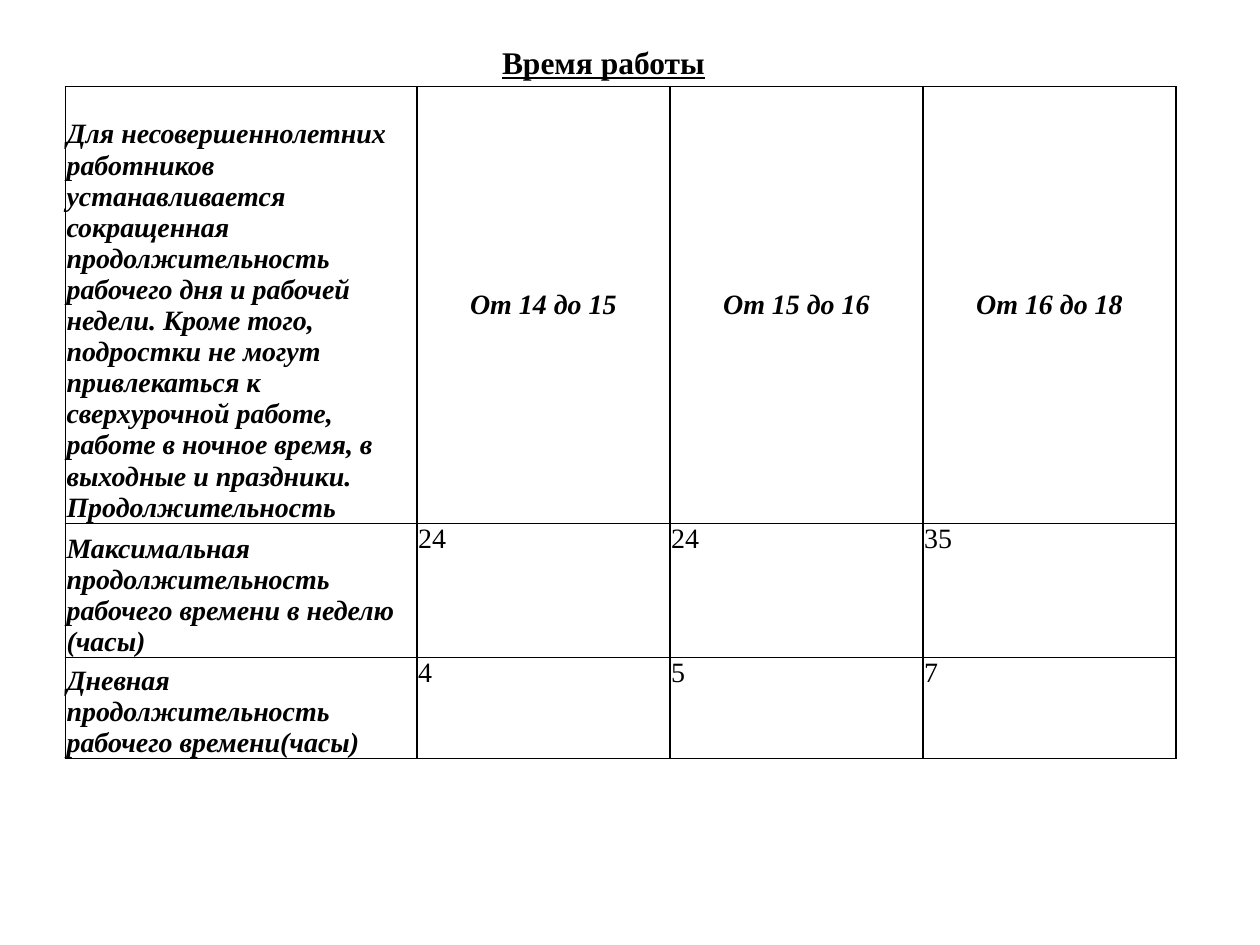
"""Build a slide with a table of working hours for under-age employees."""

from dataclasses import dataclass

from lxml.etree import SubElement
from pptx import Presentation
from pptx.dml.color import RGBColor
from pptx.enum.text import MSO_ANCHOR as Anchor
from pptx.enum.text import MSO_AUTO_SIZE as AutoSize
from pptx.enum.text import PP_ALIGN as Align
from pptx.oxml.ns import qn
from pptx.util import Pt


@dataclass(frozen=True)
class Theme:
    font: str = "Times New Roman"
    ink: RGBColor = RGBColor(0, 0, 0)
    title_size: Pt = Pt(18)
    table_size: Pt = Pt(16)
    border: Pt = Pt(1)


theme = Theme()


def add_text(paragraph, text, size, bold, italic=False, underline=False):
    run = paragraph.add_run()
    run.text = text
    font = run.font
    font.name, font.size, font.color.rgb = theme.font, size, theme.ink
    font.bold, font.italic, font.underline = bold, italic, underline


def add_borders(cell):
    properties = cell._tc.get_or_add_tcPr()
    for position, side in enumerate(("lnL", "lnR", "lnT", "lnB")):
        line = properties.makeelement(qn(f"a:{side}"), {"w": str(theme.border)})
        properties.insert(position, line)
        fill = SubElement(line, qn("a:solidFill"))
        SubElement(fill, qn("a:srgbClr"), val=str(theme.ink))


presentation = Presentation()
presentation.slide_width, presentation.slide_height = Pt(720), Pt(540)
slide = presentation.slides.add_slide(presentation.slide_layouts[6])

title = slide.shapes.add_textbox(Pt(144.7), Pt(20.9), Pt(400.3), Pt(28.8))
title.text_frame.word_wrap = True
title.text_frame.auto_size = AutoSize.SHAPE_TO_FIT_TEXT
title_paragraph = title.text_frame.paragraphs[0]
title_paragraph.alignment = Align.CENTER
add_text(title_paragraph, "Время работы", theme.title_size, True, underline=True)

rows = [
    (
        "Для несовершеннолетних работников устанавливается сокращенная "
        "продолжительность рабочего дня и рабочей недели. Кроме того, подростки "
        "не могут привлекаться к сверхурочной работе, работе в ночное время, "
        "в выходные и праздники. Продолжительность",
        "От 14 до 15", "От 15 до 16", "От 16 до 18",
    ),
    ("Максимальная продолжительность рабочего времени в неделю (часы)", "24", "24", "35"),
    ("Дневная продолжительность рабочего времени(часы)", "4", "5", "7"),
]
column_widths = [200.9] + [144.6] * 3
row_heights = [147.6, 66.2, 33.1]

table_frame = slide.shapes.add_table(
    len(rows), len(column_widths), Pt(37.3), Pt(49.5), Pt(634.7), Pt(345.6)
)
table = table_frame.table
table.first_row = table.horz_banding = False
for column, width in zip(table.columns, column_widths):
    column.width = Pt(width)
for row, height in zip(table.rows, row_heights):
    row.height = Pt(height)
table_frame.height = Pt(345.6)

for row_index, texts in enumerate(rows):
    for column_index, text in enumerate(texts):
        cell = table.cell(row_index, column_index)
        is_label = column_index == 0
        is_heading = row_index == 0 and not is_label
        cell.margin_left = cell.margin_right = Pt(0.75)
        cell.margin_top = cell.margin_bottom = Pt(0)
        cell.vertical_anchor = (
            Anchor.BOTTOM if is_label else Anchor.MIDDLE if is_heading else Anchor.TOP
        )
        cell.fill.background()
        add_borders(cell)
        paragraph = cell.text_frame.paragraphs[0]
        paragraph.alignment = Align.CENTER if is_heading else Align.LEFT
        emphasis = is_label or is_heading
        add_text(paragraph, text, theme.table_size, emphasis, emphasis)

presentation.save("out.pptx")
